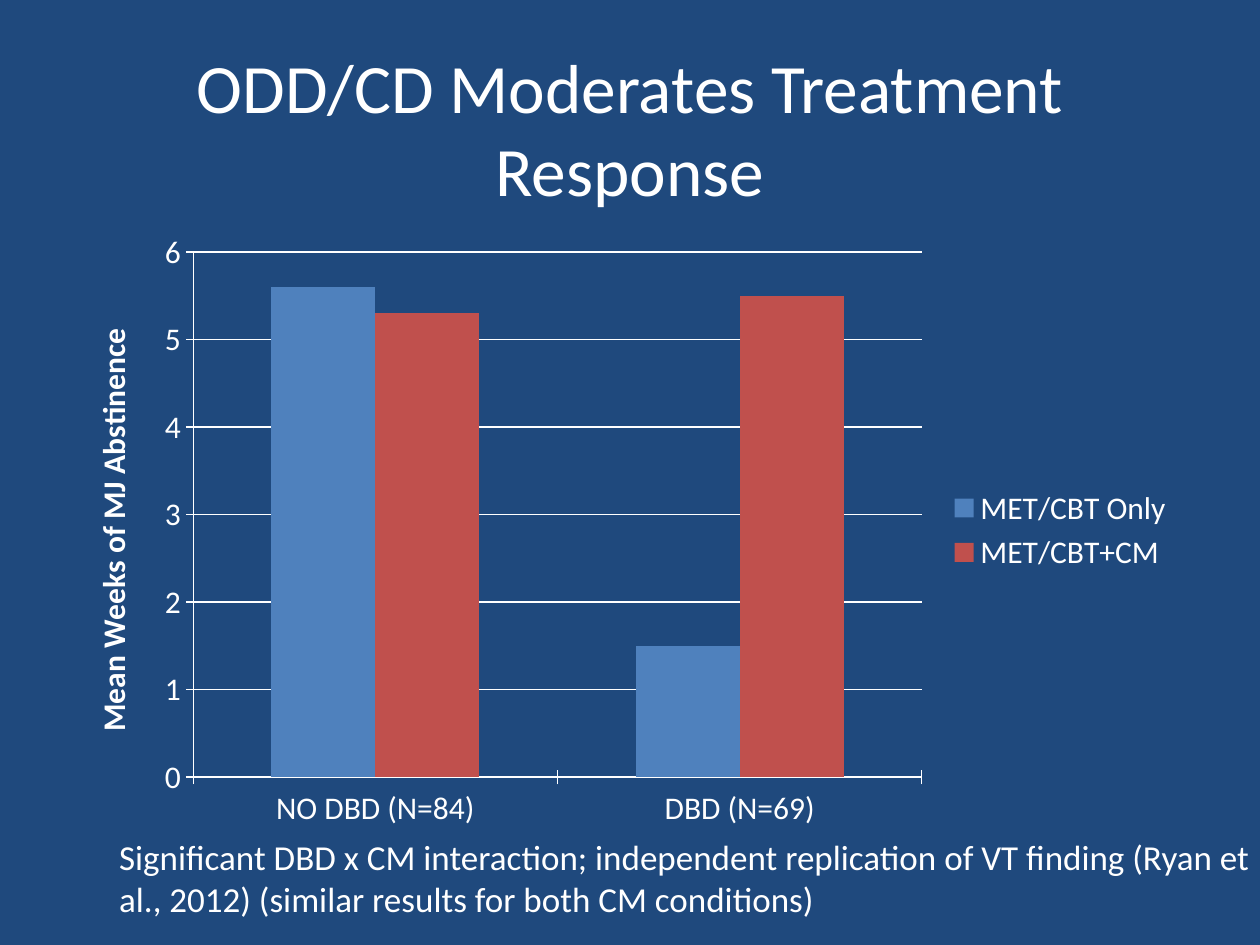
from dataclasses import dataclass

from pptx import Presentation
from pptx.chart.data import CategoryChartData
from pptx.dml.color import RGBColor
from pptx.enum.chart import XL_CHART_TYPE, XL_LEGEND_POSITION, XL_TICK_MARK
from pptx.enum.text import MSO_ANCHOR, MSO_AUTO_SIZE, PP_ALIGN
from pptx.util import Pt


@dataclass(frozen=True)
class Theme:
    font: str = "Calibri"
    background: RGBColor = RGBColor(0x1F, 0x49, 0x7D)
    text: RGBColor = RGBColor(0xFF, 0xFF, 0xFF)
    series: tuple = (RGBColor(0x4F, 0x81, 0xBD), RGBColor(0xC0, 0x50, 0x4D))
    title_size: float = 39.6
    chart_size: float = 18
    caption_size: float = 20


class SlideBuilder:
    def __init__(self, slide, theme):
        self.slide = slide
        self.theme = theme
        fill = slide.background.fill
        fill.solid()
        fill.fore_color.rgb = theme.background

    def style_font(self, font, size, bold=None):
        font.name = self.theme.font
        font.size = Pt(size)
        font.color.rgb = self.theme.text
        font.bold = bold

    def add_text(self, wording, box, size, align=PP_ALIGN.LEFT,
                 auto_size=MSO_AUTO_SIZE.NONE):
        frame = self.slide.shapes.add_textbox(*map(Pt, box)).text_frame
        frame.word_wrap = True
        frame.auto_size = auto_size
        frame.vertical_anchor = MSO_ANCHOR.TOP
        paragraph = frame.paragraphs[0]
        paragraph.text = wording
        paragraph.alignment = align
        self.style_font(paragraph.font, size)

    def style_axis(self, axis):
        axis.major_tick_mark = XL_TICK_MARK.CROSS
        axis.format.line.color.rgb = self.theme.text

    def add_column_chart(self, categories, series, value_title, box):
        data = CategoryChartData()
        data.categories = categories
        for name, values in series.items():
            data.add_series(name, values)
        chart = self.slide.shapes.add_chart(
            XL_CHART_TYPE.COLUMN_CLUSTERED, *map(Pt, box), data).chart
        self.style_font(chart.font, self.theme.chart_size)
        chart.has_title = False

        chart.has_legend = True
        chart.legend.position = XL_LEGEND_POSITION.RIGHT
        chart.legend.include_in_layout = False

        plot = chart.plots[0]
        plot.gap_width = 150
        plot.vary_by_categories = False
        for columns, color in zip(plot.series, self.theme.series):
            columns.format.fill.solid()
            columns.format.fill.fore_color.rgb = color

        self.style_axis(chart.category_axis)
        value_axis = chart.value_axis
        self.style_axis(value_axis)
        value_axis.has_major_gridlines = True
        value_axis.major_gridlines.format.line.color.rgb = self.theme.text
        heading = value_axis.axis_title.text_frame.paragraphs[0]
        heading.text = value_title
        self.style_font(heading.font, self.theme.chart_size, bold=True)


def main():
    presentation = Presentation()
    presentation.slide_width = Pt(720)
    presentation.slide_height = Pt(540)
    theme = Theme()
    blank = presentation.slide_layouts[6]
    builder = SlideBuilder(presentation.slides.add_slide(blank), theme)

    builder.add_text("ODD/CD Moderates Treatment Response",
                     (36, 21.6, 648, 90), theme.title_size, PP_ALIGN.CENTER)
    builder.add_column_chart(
        ["NO DBD (N=84)", "DBD (N=69)"],
        {"MET/CBT Only": (5.6, 1.5), "MET/CBT+CM": (5.3, 5.5)},
        "Mean Weeks of MJ Abstinence",
        (36, 126, 642, 354))
    builder.add_text(
        "Significant DBD x CM interaction; independent replication of VT "
        "finding (Ryan et al., 2012) (similar results for both CM conditions)",
        (61, 474, 689, 55.5), theme.caption_size,
        auto_size=MSO_AUTO_SIZE.SHAPE_TO_FIT_TEXT)

    presentation.save("out.pptx")


if __name__ == "__main__":
    main()
